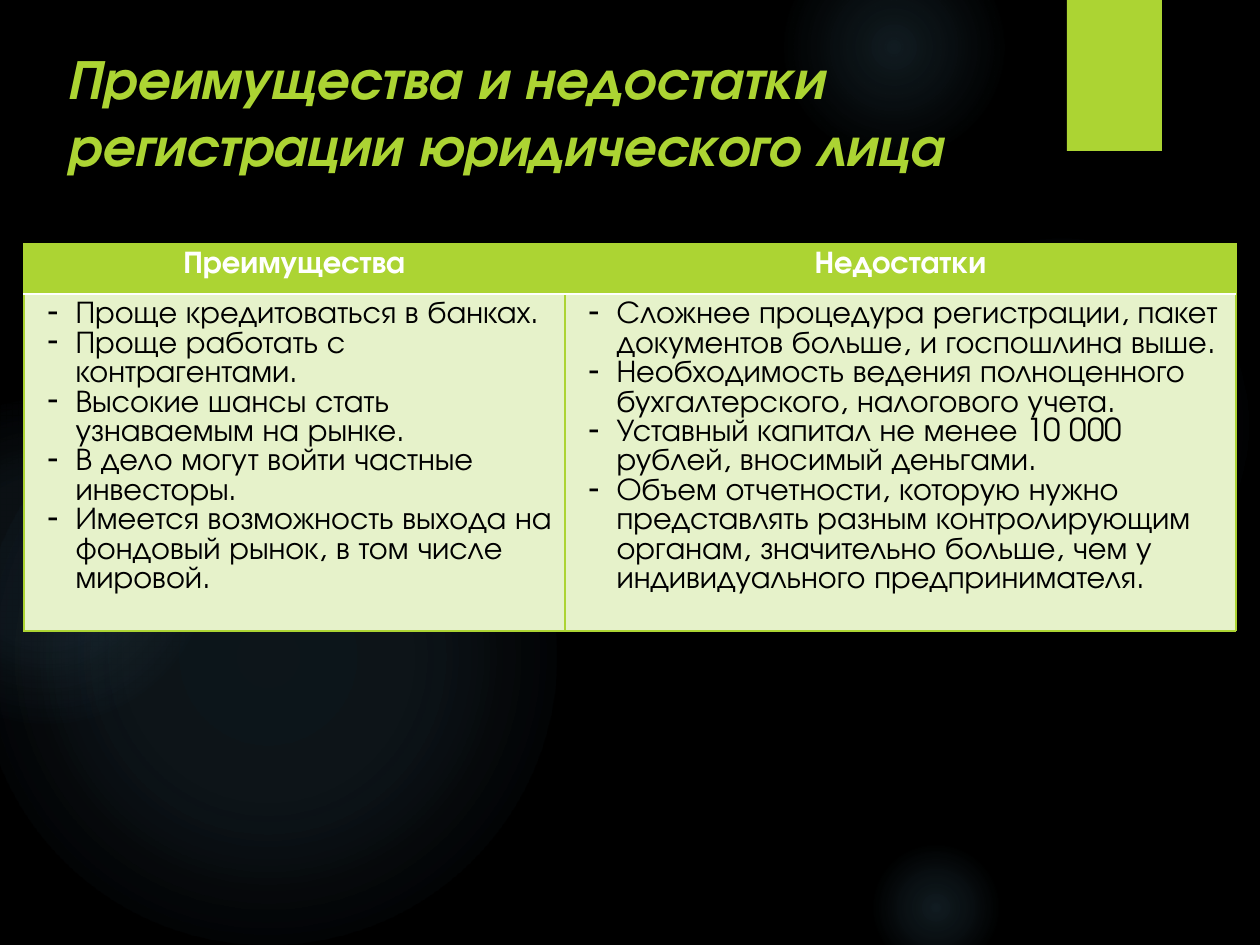
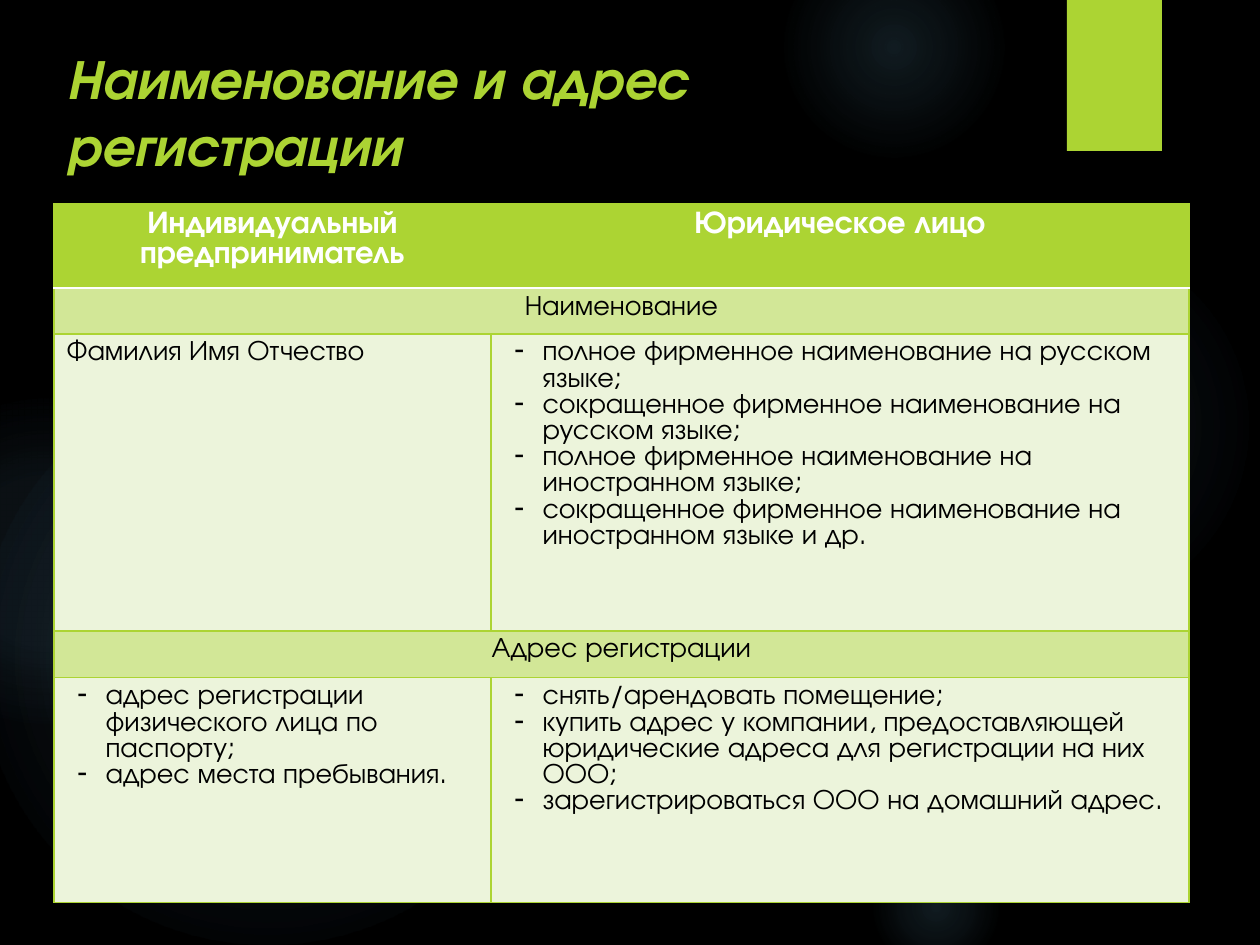
from dataclasses import dataclass
from itertools import zip_longest

from lxml import etree
from pptx import Presentation
from pptx.dml.color import RGBColor
from pptx.enum.shapes import MSO_SHAPE as Preset
from pptx.enum.text import MSO_ANCHOR as Anchor
from pptx.enum.text import MSO_AUTO_SIZE as AutoSize
from pptx.enum.text import PP_ALIGN as Align
from pptx.oxml import parse_xml
from pptx.oxml.ns import nsdecls, qn
from pptx.util import Emu, Pt

PX_PER_INCH = 126
FONT = "TeX Gyre Adventor"
TITLE_LEADING = 1.2
TABLE_LEADING = 0.935

BLACK = RGBColor(0x00, 0x00, 0x00)
WHITE = RGBColor(0xFF, 0xFF, 0xFF)
LIME = RGBColor(0xAC, 0xD4, 0x33)
LIME_BAND = RGBColor(0xD2, 0xE7, 0x97)
LIME_LIGHT = RGBColor(0xE6, 0xF2, 0xCA)
LIME_PALE = RGBColor(0xEC, 0xF4, 0xDB)
GLOW_BLUE = RGBColor(0x7A, 0xC4, 0xF0)


@dataclass(frozen=True)
class Glow:
    left: int
    top: int
    diameter: int
    center_alpha: int
    middle_alpha: int
    fade_end: int


@dataclass(frozen=True)
class Cell:
    lines: tuple[str, ...]
    fill: RGBColor
    size: int = 16
    color: RGBColor = BLACK
    bold: bool = False
    align: Align = Align.LEFT
    bullet: bool = False


@dataclass(frozen=True)
class Grid:
    left: int
    top: int
    columns: tuple[int, ...]
    rows: tuple[int, ...]
    cells: tuple[tuple[Cell, ...], ...]


@dataclass(frozen=True)
class Page:
    title: str
    title_width: int
    grid: Grid


GLOWS = (
    Glow(868, 231, 388, 7, 6, 69),
    Glow(784, -63, 220, 14, 7, 73),
    Glow(868, 840, 136, 14, 7, 66),
    Glow(-21, 368, 577, 11, 10, 75),
    Glow(-116, 399, 325, 8, 8, 72),
)


def header(text: str) -> Cell:
    return Cell((text,), LIME, size=18, color=WHITE, bold=True, align=Align.CENTER)


def band(text: str) -> Cell:
    return Cell((text,), LIME_BAND, align=Align.CENTER)


def bullets(*lines: str, fill: RGBColor = LIME_PALE, size: int = 16) -> Cell:
    return Cell(lines, fill, size=size, bullet=True)


PAGES = (
    Page(
        "Преимущества и недостатки регистрации юридического лица",
        1022,
        Grid(24, 244, (541, 671), (50, 337), (
            (header("Преимущества"), header("Недостатки")),
            (
                bullets(
                    "Проще кредитоваться в банках.",
                    "Проще работать с контрагентами.",
                    "Высокие шансы стать узнаваемым на рынке.",
                    "В дело могут войти частные инвесторы.",
                    "Имеется возможность выхода на фондовый рынок, в том числе мировой.",
                    fill=LIME_LIGHT, size=18,
                ),
                bullets(
                    "Сложнее процедура регистрации, пакет документов больше, "
                    "и госпошлина выше.",
                    "Необходимость ведения полноценного бухгалтерского, налогового учета.",
                    "Уставный капитал не менее 10 000 рублей, вносимый деньгами.",
                    "Объем отчетности, которую нужно представлять разным контролирующим "
                    "органам, значительно больше, чем у индивидуального предпринимателя.",
                    fill=LIME_LIGHT, size=18,
                ),
            ),
        )),
    ),
    Page(
        "Наименование и адрес регистрации",
        992,
        Grid(54, 204, (437, 698), (84, 46, 297, 47, 225), (
            (header("Индивидуальный предприниматель"), header("Юридическое лицо")),
            (band("Наименование"),),
            (
                Cell(("Фамилия Имя Отчество",), LIME_PALE),
                bullets(
                    "полное фирменное наименование на русском языке;",
                    "сокращенное фирменное наименование на русском языке;",
                    "полное фирменное наименование на иностранном языке;",
                    "сокращенное фирменное наименование на иностранном языке и др.",
                ),
            ),
            (band("Адрес регистрации"),),
            (
                bullets(
                    "адрес регистрации физического лица по паспорту;",
                    "адрес места пребывания.",
                ),
                bullets(
                    "снять/арендовать помещение;",
                    "купить адрес у компании, предоставляющей юридические адреса "
                    "для регистрации на них ООО;",
                    "зарегистрироваться ООО на домашний адрес.",
                ),
            ),
        )),
    ),
)


def px(length: int) -> Emu:
    return Emu(round(length * 914400 / PX_PER_INCH))


def write(frame, *lines: str, size: int, color: RGBColor, leading: float,
          bold: bool = False, italic: bool = False, align: Align = Align.LEFT,
          bullet: bool = False) -> None:
    for index, line in enumerate(lines):
        paragraph = frame.add_paragraph() if index else frame.paragraphs[0]
        paragraph.alignment = align
        paragraph.line_spacing = Pt(size * leading)
        paragraph.space_before = paragraph.space_after = Pt(0)
        run = paragraph.add_run()
        run.text = line
        run.font.name = FONT
        run.font.size = Pt(size)
        run.font.bold = bold
        run.font.italic = italic
        run.font.color.rgb = color
        if bullet:
            properties = paragraph._p.get_or_add_pPr()
            properties.set("marL", str(px(39)))
            properties.set("indent", str(px(-28)))
            etree.SubElement(properties, qn("a:buChar")).set("char", "-")


def add_plain_shape(slide, preset: Preset, left: int, top: int, width: int, height: int):
    shape = slide.shapes.add_shape(preset, px(left), px(top), px(width), px(height))
    shape.shadow.inherit = False
    shape.line.fill.background()
    return shape


def add_glow(slide, glow: Glow) -> None:
    shape = add_plain_shape(slide, Preset.OVAL, glow.left, glow.top,
                            glow.diameter, glow.diameter)
    shape.fill.background()
    stops = ((0, glow.center_alpha), (36, glow.middle_alpha), (glow.fade_end, 0))
    stop_xml = "".join(
        f'<a:gs pos="{position * 1000}"><a:srgbClr val="{GLOW_BLUE}">'
        f'<a:alpha val="{alpha * 1000}"/></a:srgbClr></a:gs>'
        for position, alpha in stops
    )
    gradient = parse_xml(
        f'<a:gradFill {nsdecls("a")} rotWithShape="1"><a:gsLst>{stop_xml}</a:gsLst>'
        '<a:path path="circle"><a:fillToRect l="50000" t="50000" r="50000" b="50000"/>'
        "</a:path></a:gradFill>"
    )
    properties = shape.element.spPr
    properties.replace(properties.find(qn("a:noFill")), gradient)


def add_backdrop(slide) -> None:
    slide.background.fill.solid()
    slide.background.fill.fore_color.rgb = BLACK
    for glow in GLOWS:
        add_glow(slide, glow)
    tab = add_plain_shape(slide, Preset.RECTANGLE, 1067, 0, 95, 151)
    tab.fill.solid()
    tab.fill.fore_color.rgb = LIME


def set_title(slide, text: str, width: int) -> None:
    title = slide.shapes.title
    title.left, title.top, title.width, title.height = map(px, (54, 37, width, 100))
    frame = title.text_frame
    frame.auto_size = AutoSize.NONE
    frame.word_wrap = True
    frame.vertical_anchor = Anchor.TOP
    write(frame, text, size=32, color=LIME, leading=TITLE_LEADING, bold=True, italic=True)
    title.element.getparent().append(title.element)


def set_border(cell, side: str, color: RGBColor, width: float) -> None:
    cell._tc.get_or_add_tcPr().append(parse_xml(
        f'<a:ln{side} {nsdecls("a")} w="{Pt(width)}"><a:solidFill>'
        f'<a:srgbClr val="{color}"/></a:solidFill></a:ln{side}>'
    ))


def style_cell(cell, row: int, fill: RGBColor) -> None:
    header_edge = {0: "B", 1: "T"}.get(row)
    for side in "LRTB":
        if side == header_edge:
            set_border(cell, side, WHITE, 1.5)
        else:
            set_border(cell, side, LIME, 0.75)
    cell.fill.solid()
    cell.fill.fore_color.rgb = fill


def add_grid(slide, grid: Grid) -> None:
    table = slide.shapes.add_table(
        len(grid.rows), len(grid.columns), px(grid.left), px(grid.top),
        px(sum(grid.columns)), px(sum(grid.rows)),
    ).table
    table.first_row = table.horz_banding = False
    for column, width in zip(table.columns, grid.columns):
        column.width = px(width)
    for row, height in zip(table.rows, grid.rows):
        row.height = px(height)
    for row_index, contents in enumerate(grid.cells):
        row_cells = list(table.rows[row_index].cells)
        if len(contents) == 1:
            row_cells[0].merge(row_cells[-1])
        for cell, content in zip_longest(row_cells, contents):
            style_cell(cell, row_index, (content or contents[0]).fill)
            if content:
                write(cell.text_frame, *content.lines, size=content.size,
                      color=content.color, leading=TABLE_LEADING, bold=content.bold,
                      align=content.align, bullet=content.bullet)


def main() -> None:
    presentation = Presentation()
    presentation.slide_width = px(1260)
    presentation.slide_height = px(945)
    for page in PAGES:
        slide = presentation.slides.add_slide(presentation.slide_layouts[5])
        add_backdrop(slide)
        set_title(slide, page.title, page.title_width)
        add_grid(slide, page.grid)
    presentation.save("out.pptx")


if __name__ == "__main__":
    main()
